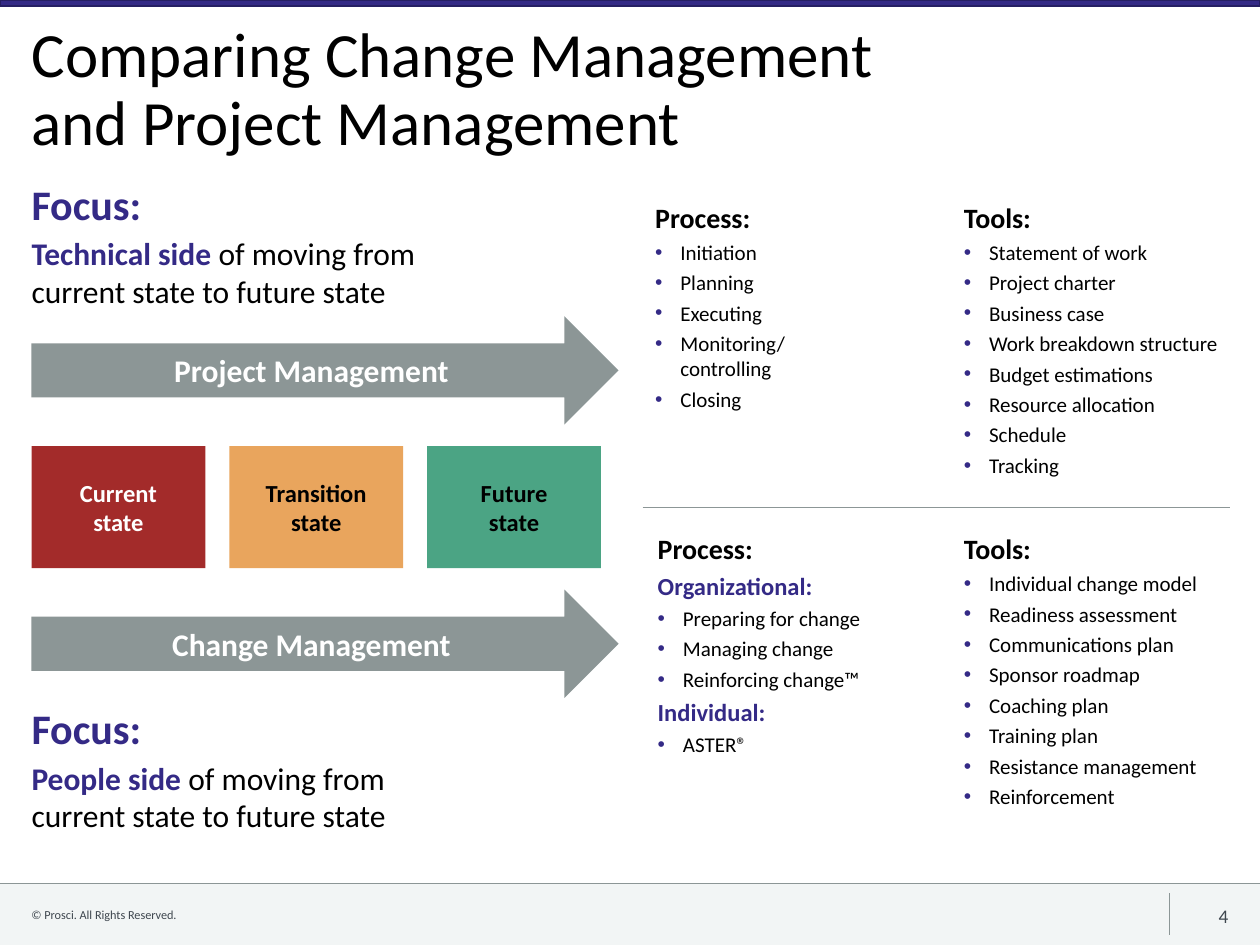
from lxml import etree
from pptx import Presentation
from pptx import util as u
from pptx.dml.color import RGBColor
from pptx.enum import shapes, text
from pptx.oxml.ns import qn

FONT = "Calibri"
PURPLE, GRAY, BLACK, WHITE, SLATE = "342A86", "8C9696", "000000", "FFFFFF", "3F474F"
TITLE = "Comparing Change Management\nand Project Management"
STATES = [("Current", "A32B2A", WHITE), ("Transition", "E9A55D", BLACK), ("Future", "4BA484", BLACK)]
ARROWS = [("Project Management", 2.51), ("Change Management", 4.68)]
FOCUS = [("Technical side", 1.37), ("People side", 5.53)]
FOCUS_REST = " of moving from current state to future state"
LISTS = [
    (5.1, 1.54, 1.79, 0.1, "Process:", [
        ("", ["Initiation", "Planning", "Executing", "Monitoring/\ncontrolling", "Closing"])]),
    (7.55, 1.54, 2.32, 0, "Tools:", [
        ("", ["Statement of work", "Project charter", "Business case", "Work breakdown structure",
              "Budget estimations", "Resource allocation", "Schedule", "Tracking"])]),
    (5.12, 4.17, 1.97, 0.1, "Process:", [
        ("Organizational:", ["Preparing for change", "Managing change", "Reinforcing change™"]),
        ("Individual:", ["ASTER®"])]),
    (7.55, 4.17, 2.32, 0, "Tools:", [
        ("", ["Individual change model", "Readiness assessment", "Communications plan",
              "Sponsor roadmap", "Coaching plan", "Training plan", "Resistance management",
              "Reinforcement"])]),
]
RULES = [(0, 7.01, 10, 7.01), (9.28, 7.09, 9.28, 7.42), (5.1, 4.03, 9.76, 4.03)]


def rgb(value):
    return RGBColor.from_string(value)


def write(p, content, size=12, color=BLACK, bold=False):
    for i, line in enumerate(content.split("\n")):
        if i:
            p.add_line_break()
        r = p.add_run()
        r.text = line
        r.font.name, r.font.size, r.font.bold = FONT, u.Pt(size), bold
        r.font.color.rgb = rgb(color)


def setup(tf, insets=(0.1, 0.05, 0.1, 0.05), anchor=text.MSO_ANCHOR.TOP, wrap=True):
    tf.margin_left, tf.margin_top, tf.margin_right, tf.margin_bottom = map(u.Inches, insets)
    tf.vertical_anchor, tf.word_wrap = anchor, wrap
    tf.auto_size = text.MSO_AUTO_SIZE.NONE
    return tf


def paragraph(tf, first=False, align=text.PP_ALIGN.LEFT, after=0, indent=0, bullet=False):
    p = tf.paragraphs[0] if first else tf.add_paragraph()
    p.alignment, p.space_before, p.space_after = align, u.Pt(0), u.Pt(after)
    pPr = p._p.get_or_add_pPr()
    pPr.set("marL", str(u.Inches(indent)))
    pPr.set("indent", str(-u.Inches(indent)))
    if bullet:
        clr = etree.SubElement(pPr, qn("a:buClr"))
        etree.SubElement(clr, qn("a:srgbClr"), val=PURPLE)
        etree.SubElement(pPr, qn("a:buFont"), typeface="Arial")
        etree.SubElement(pPr, qn("a:buChar"), char="•")
    else:
        etree.SubElement(pPr, qn("a:buNone"))
    return p


def place(sp, x, y, w, h):
    sp.left, sp.top, sp.width, sp.height = map(u.Inches, (x, y, w, h))


def add_shape(s, kind, x, y, w, h, fill, line=None):
    sp = s.shapes.add_shape(kind, *map(u.Inches, (x, y, w, h)))
    sp.shadow.inherit = False
    sp.fill.solid()
    sp.fill.fore_color.rgb = rgb(fill)
    if line:
        sp.line.color.rgb, sp.line.width = rgb(line), u.Pt(1)
    else:
        sp.line.fill.background()
    return sp


def add_rule(s, *ends):
    c = s.shapes.add_connector(shapes.MSO_CONNECTOR.STRAIGHT, *map(u.Inches, ends))
    c.line.color.rgb, c.line.width = rgb(GRAY), u.Pt(0.5)
    etree.SubElement(c._element.spPr, qn("a:effectLst"))


def add_box(s, x, y, w, h, **kwargs):
    return setup(s.shapes.add_textbox(*map(u.Inches, (x, y, w, h))).text_frame, **kwargs)


def fill_list(sp, x, y, h, right, heading, groups):
    place(sp, x, y, 2.2, h)
    tf = setup(sp.text_frame, (0.1, 0.05, right, 0.05))
    write(paragraph(tf, True, after=3, indent=0.19), heading, size=16, bold=True)
    for subheading, items in groups:
        if subheading:
            p = paragraph(tf, after=3, indent=0.19)
            write(p, subheading, size=14, color=PURPLE, bold=True)
        for item in items:
            write(paragraph(tf, after=3, indent=0.2, bullet=True), item)


def main():
    prs = Presentation()
    prs.slide_width, prs.slide_height = u.Inches(10), u.Inches(7.5)
    s = prs.slides.add_slide(prs.slide_layouts.get_by_name("Comparison"))
    rect, arrow = shapes.MSO_SHAPE.RECTANGLE, shapes.MSO_SHAPE.RIGHT_ARROW
    middle, center = text.MSO_ANCHOR.MIDDLE, text.PP_ALIGN.CENTER

    add_shape(s, rect, 0, 7.01, 10, 0.49, "F2F5F5")
    add_shape(s, rect, 0, 0, 10, 0.05, PURPLE, "261F63")
    for ends in RULES:
        add_rule(s, *ends)
    tf = add_box(s, 0.25, 7.15, 7.34, 0.22, insets=(0, 0.05, 0.1, 0.05), anchor=middle)
    write(paragraph(tf, True), "© Prosci. All Rights Reserved.", size=7, color=SLATE)
    tf = add_box(s, 9.26, 7.16, 0.49, 0.21, insets=(0, 0, 0, 0), anchor=middle)
    write(paragraph(tf, True, text.PP_ALIGN.RIGHT), "4", size=11, color=SLATE)

    title, *bodies = s.placeholders
    place(title, 0.25, 0.13, 9.5, 0.9)
    p = paragraph(setup(title.text_frame, (0, 0.05, 0, 0.05)), True)
    p.line_spacing = 0.9
    write(p, TITLE, size=36)
    for sp, data in zip(bodies, LISTS):
        fill_list(sp, *data)

    for i, (name, fill, color) in enumerate(STATES):
        sp = add_shape(s, rect, 0.25 + 1.57 * i, 3.54, 1.38, 0.97, fill)
        tf = setup(sp.text_frame, (0.2, 0.1, 0.2, 0.1), middle)
        for j, word in enumerate((name, "state")):
            write(paragraph(tf, j == 0, center), word, size=14, color=color, bold=True)

    for label, y in ARROWS:
        sp = add_shape(s, arrow, 0.25, y, 4.66, 0.86, GRAY)
        tf = setup(sp.text_frame, anchor=middle, wrap=False)
        write(paragraph(tf, True, center), label, size=18, color=WHITE, bold=True)

    for side, y in FOCUS:
        tf = add_box(s, 0.25, y, 3.55, 1.15, insets=(0, 0.05, 0, 0.05))
        p = paragraph(tf, True, after=3, indent=0.19)
        write(p, "Focus:", size=24, color=PURPLE, bold=True)
        p = paragraph(tf, after=3)
        write(p, side, size=18, color=PURPLE, bold=True)
        write(p, FOCUS_REST, size=18)

    prs.save("out.pptx")


if __name__ == "__main__":
    main()
